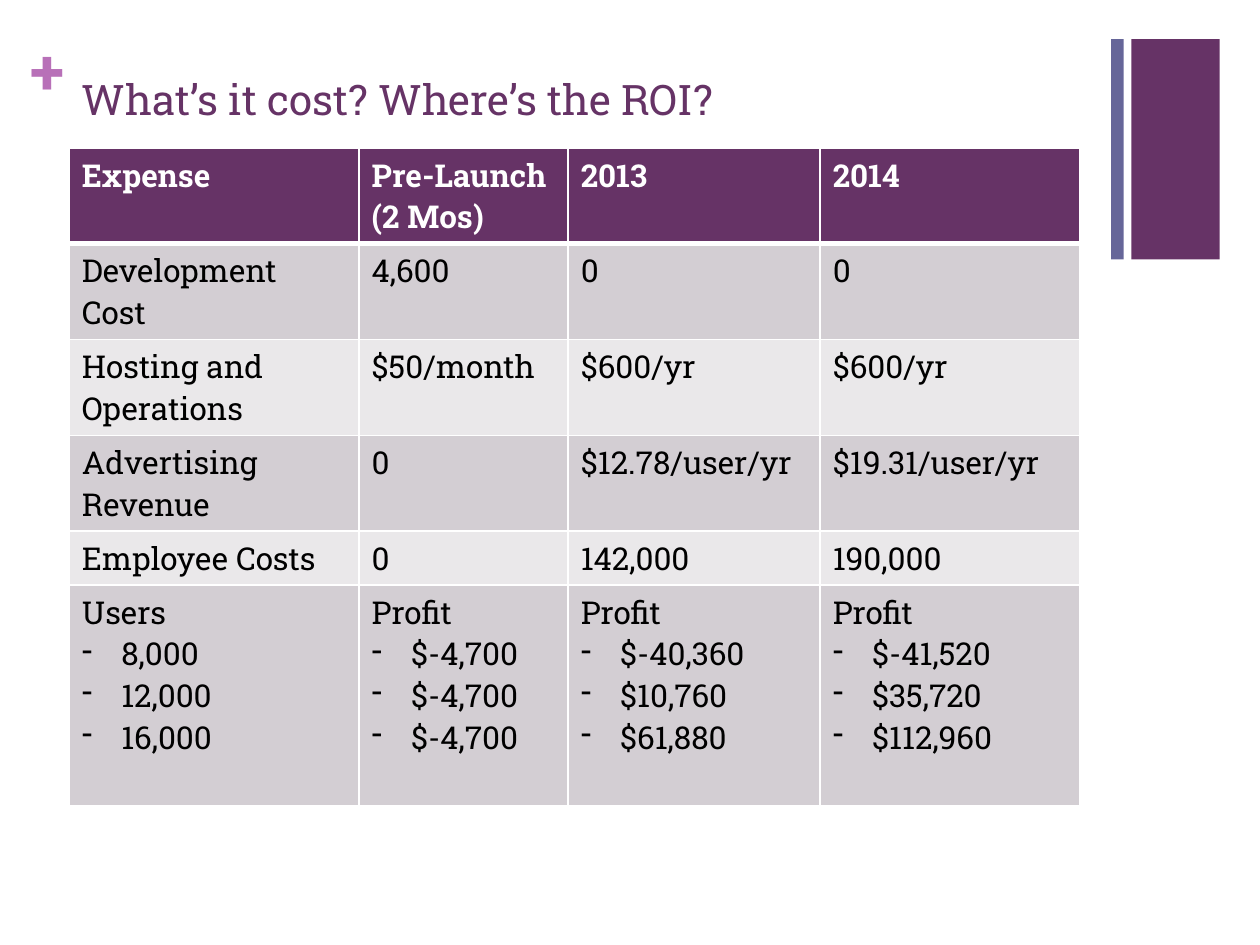
from lxml import etree
from pptx import Presentation
from pptx.dml.color import RGBColor
from pptx.enum.shapes import MSO_SHAPE
from pptx.oxml.ns import qn
from pptx.util import Pt

RECTANGLE = MSO_SHAPE.RECTANGLE
FONT = "Roboto Slab"
PURPLE, BLUE, ORCHID = "663366", "666699", "B870B8"
WHITE, BLACK = "FFFFFF", "000000"
BANDS = ["EAE8EA", "D3CED3"]


def color(hex_string):
    return RGBColor.from_string(hex_string)


def format_runs(text_frame, size, hex_string, bold=False):
    for paragraph in text_frame.paragraphs:
        for run in paragraph.runs:
            run.font.name = FONT
            run.font.size = Pt(size)
            run.font.bold = bold
            run.font.color.rgb = color(hex_string)


presentation = Presentation()
presentation.slide_width = Pt(720)
presentation.slide_height = Pt(540)
slide = presentation.slides.add_slide(presentation.slide_layouts[6])

for left, width, fill in [(646.5, 50.5, PURPLE), (635, 7.2, BLUE)]:
    bar = slide.shapes.add_shape(RECTANGLE, Pt(left), Pt(22.3), Pt(width), Pt(126))
    bar.shadow.inherit = False
    bar.fill.solid()
    bar.fill.fore_color.rgb = color(fill)
    bar.line.fill.background()

plus = slide.shapes.add_textbox(Pt(17.3), Pt(18), Pt(20.9), Pt(43.9))
plus_frame = plus.text_frame
plus_frame.margin_left = plus_frame.margin_right = Pt(0)
plus_frame.margin_top = plus_frame.margin_bottom = Pt(0)
plus_frame.text = "+"
format_runs(plus_frame, 36, ORCHID, bold=True)

title = slide.shapes.add_textbox(Pt(39.6), Pt(38.2), Pt(594.7), Pt(87.8))
title.text_frame.word_wrap = True
title.text_frame.text = "What’s it cost? Where’s the ROI?"
format_runs(title.text_frame, 24, PURPLE)

rows = [
    ["Expense", "Pre-Launch (2 Mos)", "2013", "2014"],
    ["Development Cost", "4,600", "0", "0"],
    ["Hosting and Operations", "$50/month", "$600/yr", "$600/yr"],
    ["Advertising Revenue", "0", "$12.78/user/yr", "$19.31/user/yr"],
    ["Employee Costs", "0", "142,000", "190,000"],
    [
        "Users\n8,000\n12,000\n16,000",
        "Profit\n$-4,700\n$-4,700\n$-4,700",
        "Profit\n$-40,360\n$10,760\n$61,880",
        "Profit\n$-41,520\n$35,720\n$112,960",
    ],
]
column_widths = [165.6, 119.5, 144, 148.3]
row_heights = [54.75] * 4 + [30.85, 126.25]

table = slide.shapes.add_table(
    len(rows), len(column_widths), Pt(39.6), Pt(84.5),
    Pt(sum(column_widths)), Pt(sum(row_heights)),
).table
for column, width in zip(table.columns, column_widths):
    column.width = Pt(width)
for row, height in zip(table.rows, row_heights):
    row.height = Pt(height)

for row_index, row in enumerate(rows):
    header = row_index == 0
    for column_index, text in enumerate(row):
        cell = table.cell(row_index, column_index)
        cell.text_frame.text = text
        format_runs(cell.text_frame, 18, WHITE if header else BLACK, bold=header)

        for paragraph in cell.text_frame.paragraphs[1:]:
            properties = paragraph._p.get_or_add_pPr()
            properties.set("marL", str(Pt(22.5)))
            properties.set("indent", str(-Pt(22.5)))
            etree.SubElement(properties, qn("a:buChar"), char="-")

        cell_properties = cell._tc.get_or_add_tcPr()
        for side in ["L", "R", "T", "B"]:
            under_header = (row_index, side) in [(0, "B"), (1, "T")]
            border = etree.SubElement(
                cell_properties, qn(f"a:ln{side}"), w=str(Pt(3 if under_header else 1))
            )
            border_fill = etree.SubElement(border, qn("a:solidFill"))
            etree.SubElement(border_fill, qn("a:srgbClr"), val=WHITE)
        cell.fill.solid()
        cell.fill.fore_color.rgb = color(PURPLE if header else BANDS[row_index % 2])

presentation.save("out.pptx")
